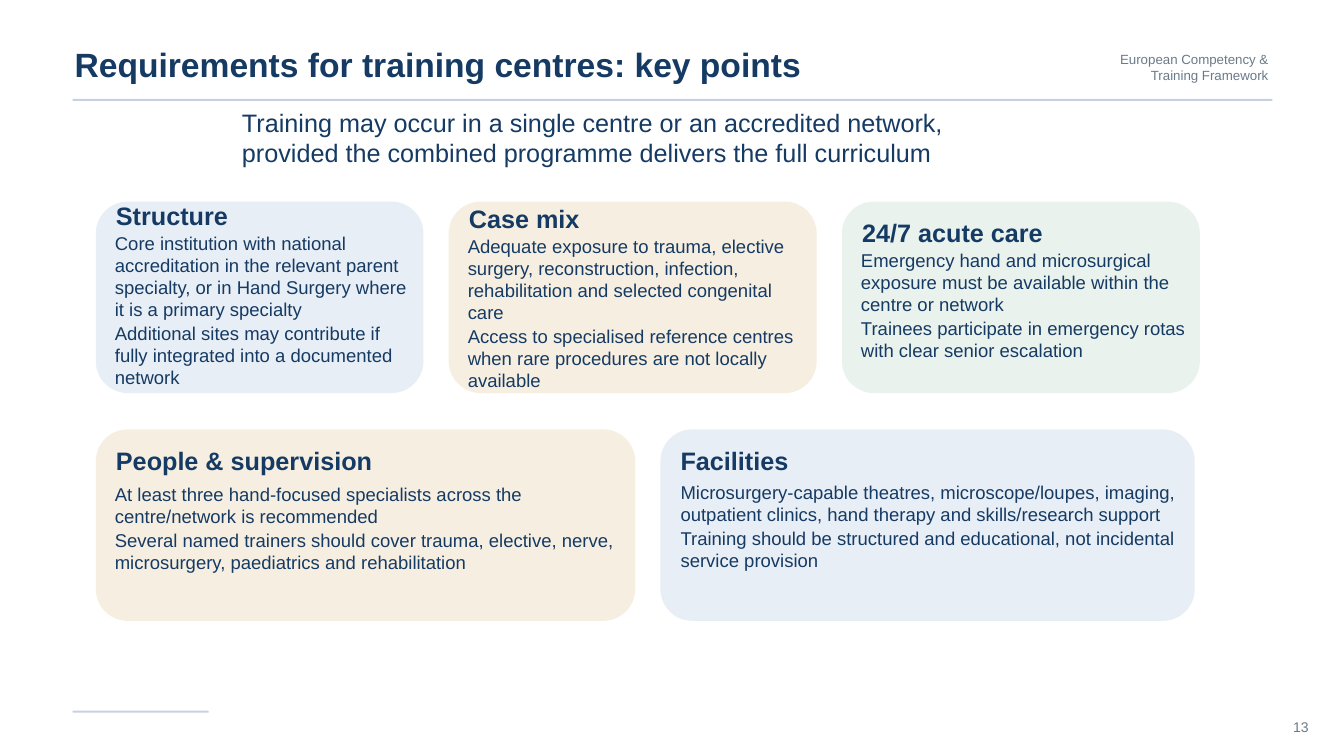
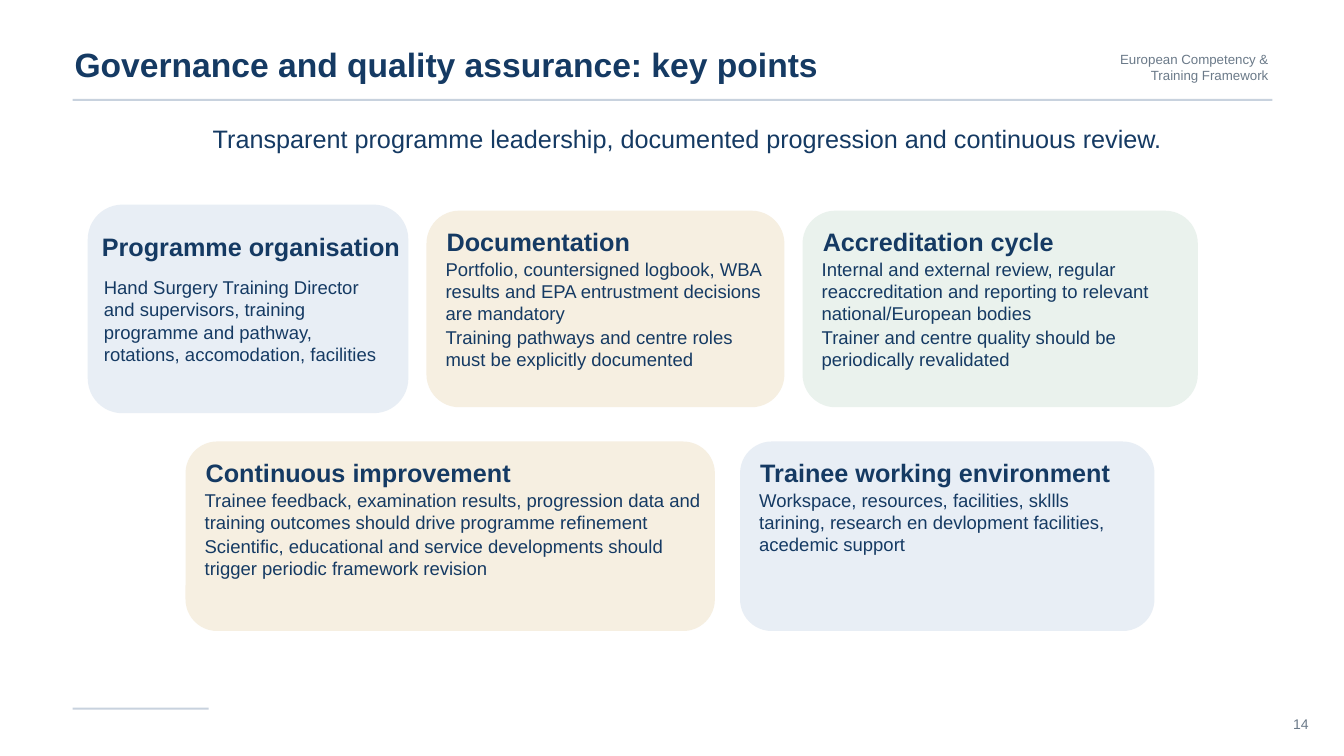
from dataclasses import dataclass

from pptx import Presentation
from pptx.dml.color import RGBColor
from pptx.enum.shapes import MSO_SHAPE as Shape
from pptx.enum.text import MSO_AUTO_SIZE as Fit, PP_ALIGN as Align
from pptx.slide import Slide
from pptx.util import Inches, Pt

FONT = "Arial"
NAVY, GREY, RULE = "153A63", "6B7A89", "C8D2DE"
BLUE, SAND, MINT = "E8EEF5", "F6EFE1", "EAF2ED"


@dataclass
class Box:
    left: float
    top: float
    width: float
    height: float


@dataclass
class Style:
    size: float
    color: str = NAVY
    bold: bool = False
    align: Align = Align.LEFT
    inset: float = 0.02
    after: float = 0


@dataclass
class Card:
    """Offsets run from the row's top and the card's left, in inches."""
    head: str
    body: list[str]
    lines: int
    width: float
    fill: str
    drop: float = 0.14    # row top to heading
    step: float = 0.32    # heading to body
    pad: float = 0.18     # card left to heading
    indent: float = 0     # heading left to body left
    trim: float = 0.28    # card width less body width
    bleed: float = 0      # growth above and below the row


@dataclass
class Row:
    left: float
    top: float
    height: float
    gap: float
    cards: list[Card]


@dataclass
class Page:
    number: int
    title: str
    lead: list[str]
    lead_box: Box
    foot: float
    rows: list[Row]


TITLE = Style(24, bold=True)
LABEL = Style(9.5, GREY, align=Align.RIGHT)
NUMBER = Style(10, GREY, align=Align.RIGHT)
LEAD = Style(18)
HEAD = Style(18, bold=True)
BODY = Style(13.2, inset=0.01, after=1)


def rgb(code: str) -> RGBColor:
    return RGBColor.from_string(code)


def place(box: Box) -> list[Inches]:
    return [Inches(n) for n in (box.left, box.top, box.width, box.height)]


def add_text(slide: Slide, box: Box, texts: list[str], style: Style) -> None:
    frame = slide.shapes.add_textbox(*place(box)).text_frame
    frame.word_wrap = True
    frame.auto_size = Fit.SHAPE_TO_FIT_TEXT
    frame.margin_left = frame.margin_right = Inches(style.inset)
    frame.margin_top = frame.margin_bottom = Inches(style.inset)
    for i, text in enumerate(texts):
        para = frame.add_paragraph() if i else frame.paragraphs[0]
        para.text = text
        para.alignment = style.align
        para.space_after = Pt(style.after)
        font = para.font
        font.name, font.size, font.bold = FONT, Pt(style.size), style.bold
        font.color.rgb = rgb(style.color)


def add_fill(slide: Slide, box: Box, color: str, kind: Shape = Shape.RECTANGLE) -> None:
    shape = slide.shapes.add_shape(kind, *place(box))
    shape.shadow.inherit = False
    shape.fill.solid()
    shape.fill.fore_color.rgb = rgb(color)
    shape.line.fill.background()


def add_card(slide: Slide, card: Card, row: Row, left: float) -> None:
    panel = Box(left, row.top - card.bleed, card.width, row.height + 2 * card.bleed)
    add_fill(slide, panel, card.fill, Shape.ROUNDED_RECTANGLE)
    x, y = left + card.pad, row.top + card.drop
    add_text(slide, Box(x, y, card.width, 0.3), [card.head], HEAD)
    body = Box(x + card.indent, y + card.step, card.width - card.trim, 0.225 * card.lines + 0.02)
    add_text(slide, body, card.body, BODY)


def add_row(slide: Slide, row: Row) -> None:
    left = row.left
    for card in row.cards:
        add_card(slide, card, row, left)
        left += card.width + row.gap


def add_frame(slide: Slide, page: Page) -> None:
    """Draw the title, corner label, rules and page number."""
    add_text(slide, Box(0.72, 0.42, 8.9, 0.44), [page.title], TITLE)
    add_text(slide, Box(10.85, 0.49, 1.75, 0.18),
             ["European Competency & Training Framework"], LABEL)
    add_fill(slide, Box(0.72, 0.98, 11.9, 0.02), RULE)
    add_fill(slide, Box(0.72, page.foot, 1.35, 0.02), RULE)
    add_text(slide, Box(12.65, page.foot + 0.06, 0.35, 0.2), [str(page.number)], NUMBER)


PAGES = [
    Page(13, "Requirements for training centres: key points",
         ["Training may occur in a single centre or an accredited network,",
          "provided the combined programme delivers the full curriculum"],
         Box(2.38, 1.04, 11, 0.65), 7.05, [
             Row(0.95, 2, 1.9, 0.25, [
                 Card("Structure",
                      ["Core institution with national accreditation in the relevant parent "
                       "specialty, or in Hand Surgery where it is a primary specialty",
                       "Additional sites may contribute if fully integrated into a "
                       "documented network"],
                      7, 3.25, BLUE, drop=-0.03),
                 Card("Case mix",
                      ["Adequate exposure to trauma, elective surgery, reconstruction, "
                       "infection, rehabilitation and selected congenital care",
                       "Access to specialised reference centres when rare procedures are "
                       "not locally available"],
                      7, 3.65, SAND, drop=0),
                 Card("24/7 acute care",
                      ["Emergency hand and microsurgical exposure must be available within "
                       "the centre or network",
                       "Trainees participate in emergency rotas with clear senior escalation"],
                      5, 3.55, MINT),
             ]),
             Row(0.95, 4.26, 1.9, 0.25, [
                 Card("People & supervision",
                      ["At least three hand-focused specialists across the centre/network "
                       "is recommended",
                       "Several named trainers should cover trauma, elective, nerve, "
                       "microsurgery, paediatrics and rehabilitation"],
                      4, 5.35, SAND, step=0.38),
                 Card("Facilities",
                      ["Microsurgery-capable theatres, microscope/loupes, imaging, outpatient "
                       "clinics, hand therapy and skills/research support",
                       "Training should be structured and educational, not incidental "
                       "service provision"],
                      4, 5.3, BLUE, step=0.36, indent=0.01),
             ]),
         ]),
    Page(14, "Governance and quality assurance: key points",
         ["Transparent programme leadership, documented progression and continuous review."],
         Box(2.09, 1.2, 11, 0.34), 7.02, [
             Row(0.87, 2.09, 1.95, 0.18, [
                 Card("Programme organisation",
                      ["Hand Surgery Training Director and supervisors, training programme "
                       "and pathway, rotations, accomodation, facilities"],
                      4, 3.18, BLUE, drop=0.18, step=0.46, pad=0.12, indent=0.03,
                      trim=0.46, bleed=0.06),
                 Card("Documentation",
                      ["Portfolio, countersigned logbook, WBA results and EPA entrustment "
                       "decisions are mandatory",
                       "Training pathways and centre roles must be explicitly documented"],
                      5, 3.55, SAND),
                 Card("Accreditation cycle",
                      ["Internal and external review, regular reaccreditation and reporting "
                       "to relevant national/European bodies",
                       "Trainer and centre quality should be periodically revalidated"],
                      5, 3.92, MINT),
             ]),
             Row(1.84, 4.38, 1.88, 0.25, [
                 Card("Continuous improvement",
                      ["Trainee feedback, examination results, progression data and training "
                       "outcomes should drive programme refinement",
                       "Scientific, educational and service developments should trigger "
                       "periodic framework revision"],
                      4, 5.25, SAND),
                 Card("Trainee working environment",
                      ["Workspace, resources, facilities, skllls tarining, research en "
                       "devlopment facilities, acedemic support"],
                      3, 4.11, BLUE, trim=0.64),
             ]),
         ]),
]


def main() -> None:
    deck = Presentation()
    deck.slide_width, deck.slide_height = Inches(13.33), Inches(7.5)
    for page in PAGES:
        slide = deck.slides.add_slide(deck.slide_layouts[6])
        add_frame(slide, page)
        add_text(slide, page.lead_box, page.lead, LEAD)
        for row in page.rows:
            add_row(slide, row)
    deck.save("out.pptx")


if __name__ == "__main__":
    main()
